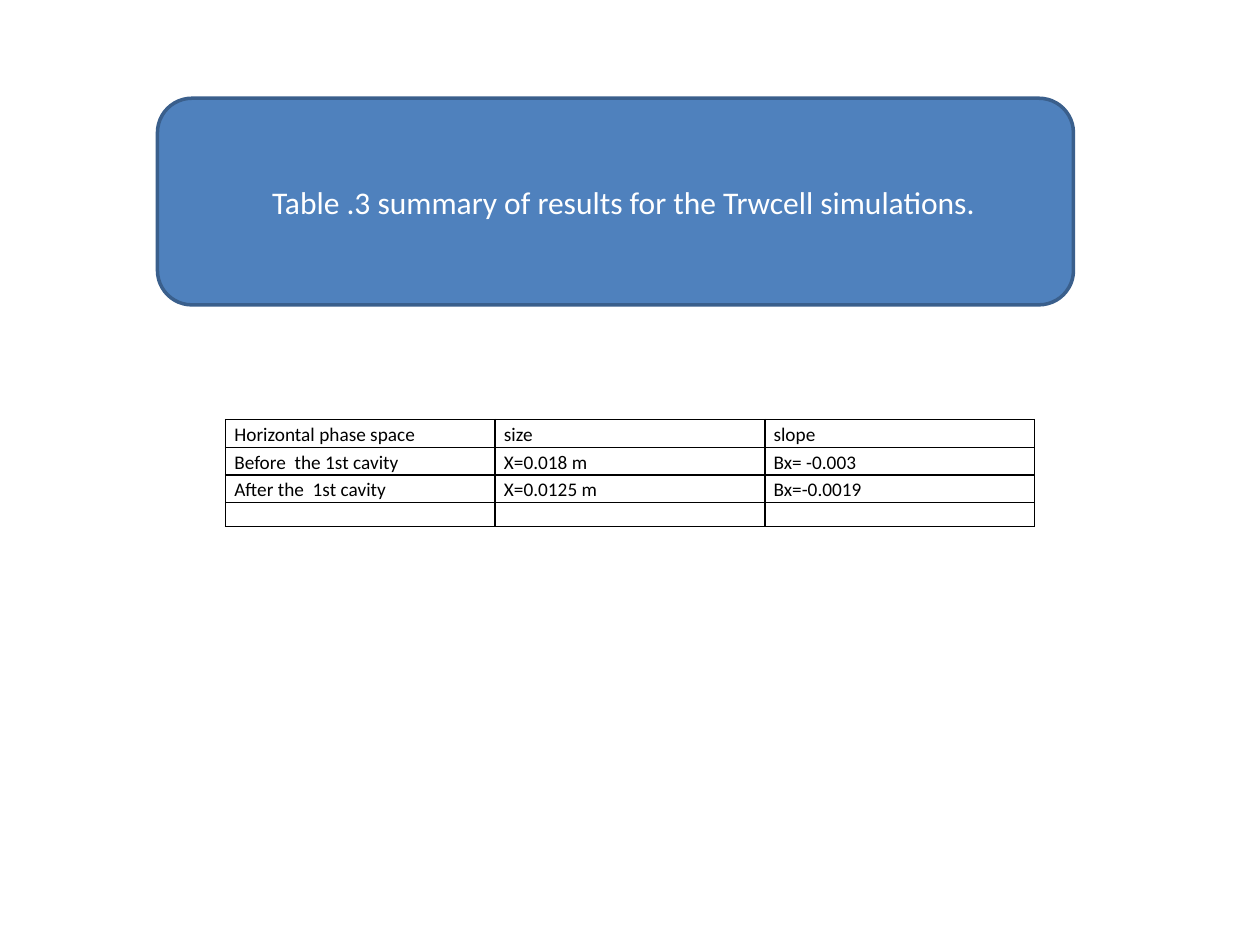
"""Build a slide with a caption banner above a table of simulation results."""
import pptx
import pptx.dml.color
import pptx.enum.shapes
import pptx.enum.text
import pptx.oxml
import pptx.oxml.ns
import pptx.util
from pptx.util import Inches


def color(hex_value):
    return pptx.dml.color.RGBColor.from_string(hex_value)


def add_borders(cell, hex_value, points):
    properties = cell._tc.get_or_add_tcPr()
    for position, side in enumerate(("lnL", "lnR", "lnT", "lnB")):
        border = pptx.oxml.parse_xml(
            f'<a:{side} {pptx.oxml.ns.nsdecls("a")} w="{pptx.util.Pt(points)}">'
            f'<a:solidFill><a:srgbClr val="{hex_value}"/></a:solidFill></a:{side}>'
        )
        properties.insert(position, border)


presentation = pptx.Presentation()
presentation.slide_width = Inches(10)
presentation.slide_height = Inches(7.5)
slide = presentation.slides.add_slide(presentation.slide_layouts[6])

phase_space = [
    ("Horizontal phase space", "size", "slope"),
    ("Before  the 1st cavity", "X=0.018 m", "Bx= -0.003"),
    ("After the  1st cavity", "X=0.0125 m", "Bx=-0.0019"),
    ("", "", ""),
]
results = slide.shapes.add_table(
    4, 3, Inches(1.79), Inches(3.33), Inches(6.42), Inches(0.84)
).table
for column in results.columns:
    column.width = Inches(2.14)
for row, values in zip(results.rows, phase_space):
    row.height = Inches(0.22 if any(values) else 0.18)
    for cell, value in zip(row.cells, values):
        cell.margin_left = cell.margin_right = Inches(0.07)
        cell.margin_top = cell.margin_bottom = 0
        cell.fill.background()
        add_borders(cell, "000000", 1)
        entry = cell.text_frame.paragraphs[0]
        if value:
            entry.text = value
            entry.line_spacing = 1.15
            font = entry.runs[0].font
            font.name = "Calibri"
            font.size = pptx.util.Pt(11)
            font.bold = False
            font.color.rgb = color("000000")
        else:
            entry._p.append(pptx.oxml.parse_xml(
                f'<a:endParaRPr {pptx.oxml.ns.nsdecls("a")} sz="1100"/>'
            ))

banner = slide.shapes.add_shape(
    pptx.enum.shapes.MSO_SHAPE.ROUNDED_RECTANGLE,
    Inches(1.25), Inches(0.78), Inches(7.27), Inches(1.64),
)
banner.shadow.inherit = False
banner.fill.solid()
banner.fill.fore_color.rgb = color("4F81BD")
banner.line.color.rgb = color("3A5F8C")
banner.line.width = pptx.util.Pt(2)
banner.text_frame.text = "Table .3 summary of results for the Trwcell simulations."
banner.text_frame.word_wrap = True
banner.text_frame.margin_left = Inches(0.83)
banner.text_frame.vertical_anchor = pptx.enum.text.MSO_ANCHOR.MIDDLE
caption = banner.text_frame.paragraphs[0]
caption.alignment = pptx.enum.text.PP_ALIGN.LEFT
caption_font = caption.runs[0].font
caption_font.name = "Calibri"
caption_font.size = pptx.util.Pt(18)
caption_font.color.rgb = color("FFFFFF")

presentation.save("out.pptx")
